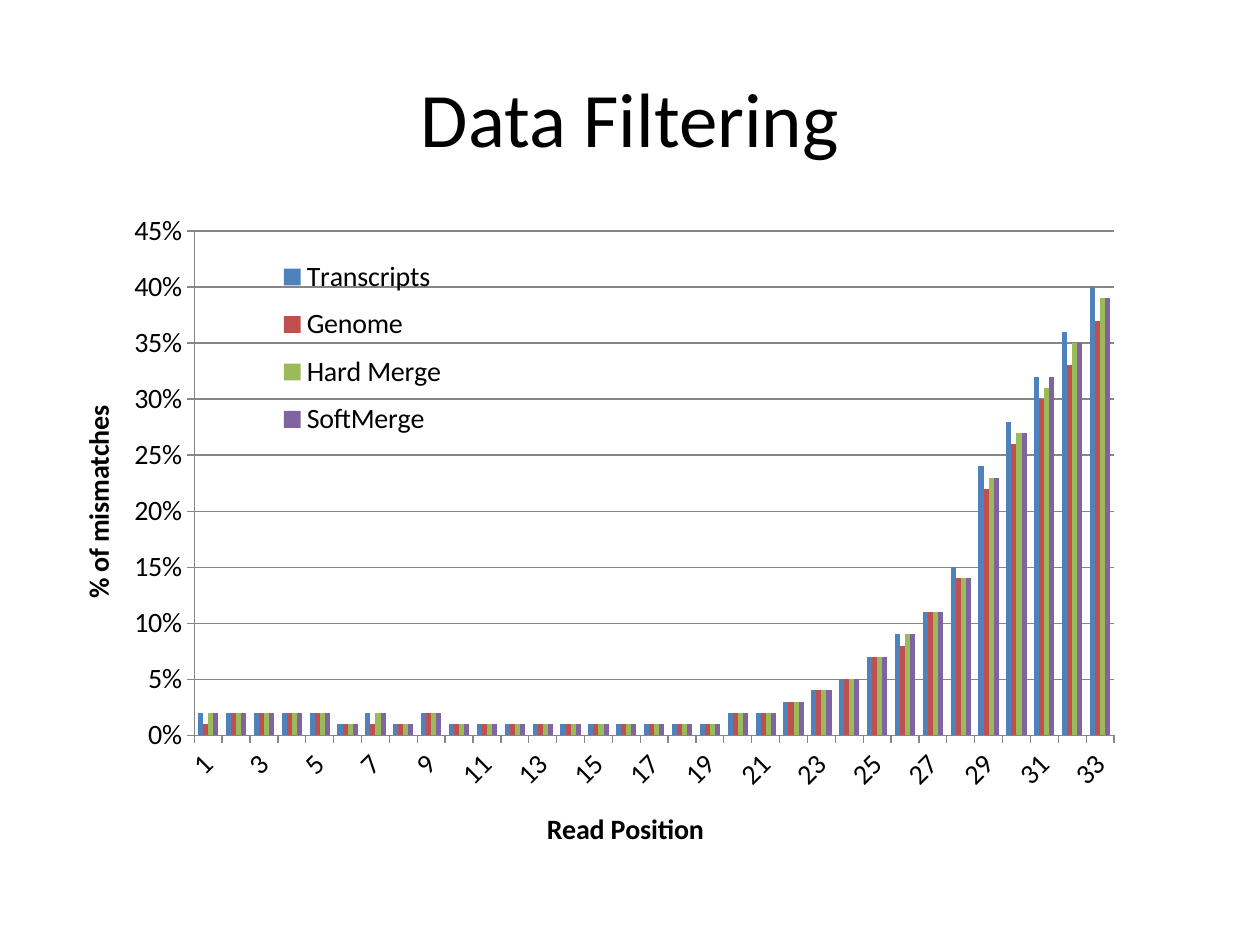
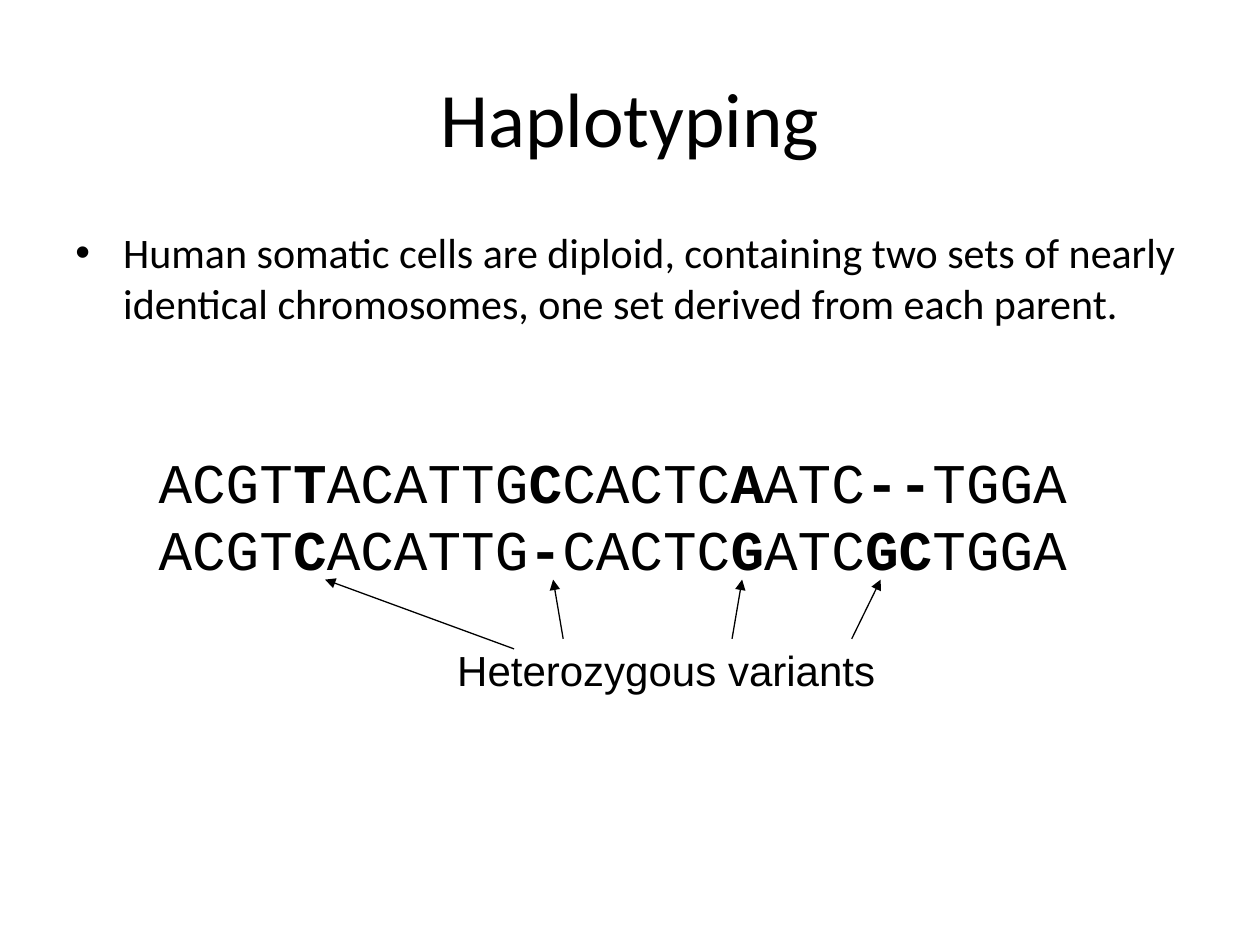
import lxml.etree
import pptx
import pptx.chart.data
import pptx.dml.color
import pptx.enum.chart
import pptx.enum.shapes
import pptx.enum.text
import pptx.oxml.ns
import pptx.util

EMU_PER_PX = 9144  # 100 px to the inch
COLOURS = {
    "text": "000000",
    "axis": "868686",
    "Transcripts": "4F81BD",
    "Genome": "C0504D",
    "Hard Merge": "9BBB59",
    "SoftMerge": "8064A2",
}
ALIGN = pptx.enum.text.PP_ALIGN
ANCHOR = pptx.enum.text.MSO_ANCHOR

# Percent of mismatches at read positions 1 to 33; all series agree on 8 to 25
SHARED_READS = [1, 2] + [1] * 10 + [2, 2, 3, 4, 5, 7]
MISMATCHES = {
    "Transcripts": [2, 2, 2, 2, 2, 1, 2] + SHARED_READS + [9, 11, 15, 24, 28, 32, 36, 40],
    "Genome": [1, 2, 2, 2, 2, 1, 1] + SHARED_READS + [8, 11, 14, 22, 26, 30, 33, 37],
    "Hard Merge": [2, 2, 2, 2, 2, 1, 2] + SHARED_READS + [9, 11, 14, 23, 27, 31, 35, 39],
    "SoftMerge": [2, 2, 2, 2, 2, 1, 2] + SHARED_READS + [9, 11, 14, 23, 27, 32, 35, 39],
}
HAPLOTYPES = [
    "ACGT|T|ACATTG|C|CACTC|A|ATC|--|TGGA",
    "ACGT|C|ACATTG|-|CACTC|G|ATC|GC|TGGA",
]
VARIANT_ARROWS = [
    ((408, 515), (258, 460)),
    ((447, 507), (439, 460)),
    ((581, 507), (589, 460)),
    ((676, 507), (699, 460)),
]


def px(length):
    return pptx.util.Emu(length * EMU_PER_PX)


def rgb(name):
    return pptx.dml.color.RGBColor.from_string(COLOURS[name])


def sub(parent, tag, **attributes):
    return lxml.etree.SubElement(parent, pptx.oxml.ns.qn(tag), **attributes)


def style_font(font, size, name="Calibri", bold=False):
    font.size = pptx.util.Pt(size)
    font.name = name
    font.bold = bold
    font.color.rgb = rgb("text")


def write(paragraph, text, size, font="Calibri", bold=False, align=ALIGN.LEFT):
    """Fill a paragraph; parts between | marks are bold."""
    paragraph.alignment = align
    for index, part in enumerate(text.split("|")):
        run = paragraph.add_run()
        run.text = part
        style_font(run.font, size, font, bold or index % 2 == 1)


def place(element, **percents):
    """Give a chart part a manual layout in percent of the chart."""
    for old in element.findall(pptx.oxml.ns.qn("c:layout")):
        element.remove(old)
    layout = lxml.etree.Element(pptx.oxml.ns.qn("c:layout"))
    manual = sub(layout, "c:manualLayout")
    if element.tag.endswith("plotArea"):
        sub(manual, "c:layoutTarget", val="inner")
    for side in ("x", "y"):
        sub(manual, f"c:{side}Mode", val="edge")
    for side, percent in percents.items():
        sub(manual, f"c:{side}", val=str(round(percent / 100, 3)))
    overlay = element.find(pptx.oxml.ns.qn("c:overlay"))
    if overlay is None:
        element.insert(0, layout)
    else:
        overlay.addprevious(layout)


class Deck:
    """Holds the presentation, its shared style and the current slide."""

    def __init__(self):
        self.presentation = pptx.Presentation()
        self.presentation.slide_width = px(1000)
        self.presentation.slide_height = px(750)
        self.slide = None

    def new_slide(self, title):
        blank = self.presentation.slide_layouts[6]
        self.slide = self.presentation.slides.add_slide(blank)
        self.text_box([title], 50, 30, 900, 125, size=44,
                      anchor=ANCHOR.MIDDLE, align=ALIGN.CENTER)

    def text_box(self, lines, left, top, width, height, wrap=True, anchor=ANCHOR.TOP, **style):
        frame = self.slide.shapes.add_textbox(px(left), px(top), px(width), px(height)).text_frame
        frame.word_wrap = wrap
        frame.vertical_anchor = anchor
        for index, line in enumerate(lines):
            paragraph = frame.add_paragraph() if index else frame.paragraphs[0]
            write(paragraph, line, **style)
        return frame

    def bullet(self, text, left, top, width, height, size):
        paragraph = self.text_box([text], left, top, width, height, size=size).paragraphs[0]
        paragraph.space_before = pptx.util.Pt(size * 0.2)
        properties = paragraph._p.get_or_add_pPr()
        properties.set("marL", str(px(38)))
        properties.set("indent", str(-px(38)))
        sub(properties, "a:buFont", typeface="Arial")
        sub(properties, "a:buChar", char="•")

    def arrow(self, start, end):
        line = self.slide.shapes.add_connector(
            pptx.enum.shapes.MSO_CONNECTOR.STRAIGHT, *map(px, start + end))
        line.line.color.rgb = rgb("text")
        line.line.width = pptx.util.Pt(0.75)
        sub(line.line._get_or_add_ln(), "a:tailEnd", type="triangle")
        sub(line._element.spPr, "a:effectLst")

    def column_chart(self, percents, left, top, width, height):
        chart_data = pptx.chart.data.CategoryChartData(number_format="0%")
        positions = len(next(iter(percents.values())))
        chart_data.categories = [str(position + 1) for position in range(positions)]
        for name, values in percents.items():
            chart_data.add_series(name, [value / 100 for value in values])
        chart = self.slide.shapes.add_chart(
            pptx.enum.chart.XL_CHART_TYPE.COLUMN_CLUSTERED,
            px(left), px(top), px(width), px(height), chart_data).chart
        chart.has_title = False
        style_font(chart.font, 10)
        plot = chart.plots[0]
        plot.gap_width = 150
        plot.overlap = 0
        plot.vary_by_categories = False
        for series in plot.series:
            series.format.fill.solid()
            series.format.fill.fore_color.rgb = rgb(series.name)
        place(chart._chartSpace.chart.plotArea, x=11.1, y=7.3, w=84.2, h=70.6)
        return chart

    def axis(self, axis, title, title_angle, label_angle, **title_place):
        axis.major_tick_mark = pptx.enum.chart.XL_TICK_MARK.OUTSIDE
        axis.minor_tick_mark = pptx.enum.chart.XL_TICK_MARK.NONE
        self.thin_line(axis.format.line)
        style_font(axis.tick_labels.font, 16)
        axis._element.txPr.bodyPr.set("rot", str(label_angle * 60000))
        frame = axis.axis_title.text_frame
        write(frame.paragraphs[0], title, 16, bold=True, align=ALIGN.CENTER)
        frame._txBody.bodyPr.set("rot", str(title_angle * 60000))
        frame._txBody.bodyPr.set("vert", "horz")
        place(axis.axis_title._element, **title_place)

    def thin_line(self, line):
        line.color.rgb = rgb("axis")
        line.width = pptx.util.Pt(0.75)

    def legend(self, chart, **legend_place):
        chart.has_legend = True
        chart.legend.position = pptx.enum.chart.XL_LEGEND_POSITION.RIGHT
        chart.legend.include_in_layout = False
        style_font(chart.legend.font, 16)
        place(chart.legend._element, **legend_place)


def add_data_filtering(deck):
    deck.new_slide("Data Filtering")
    chart = deck.column_chart(MISMATCHES, 58, 142, 867, 567)
    deck.axis(chart.category_axis, "Read Position", 0, -45, x=42.9, y=87.6)
    percent_axis = chart.value_axis
    deck.axis(percent_axis, "% of mismatches", -90, 0, x=0.1, y=31)
    percent_axis.minimum_scale = 0
    percent_axis.maximum_scale = 0.45
    percent_axis.major_unit = 0.05
    percent_axis.tick_labels.number_format = "0%"
    percent_axis.tick_labels.number_format_is_linked = False
    percent_axis.has_major_gridlines = True
    deck.thin_line(percent_axis.major_gridlines.format.line)
    deck.legend(chart, x=18, y=9.5, w=17, h=28.4)


def add_haplotyping(deck):
    deck.new_slide("Haplotyping")
    deck.bullet("Human somatic cells are diploid, containing two sets of nearly identical "
                "chromosomes, one set derived from each parent.", 50, 175, 900, 117, size=24)
    deck.text_box(HAPLOTYPES, 116, 350, 742, 117, size=32, font="Courier New")
    deck.text_box(["Heterozygous variants"], 353, 507, 352, 50, wrap=False,
                  size=24, font="Arial")
    for start, end in VARIANT_ARROWS:
        deck.arrow(start, end)


def main():
    deck = Deck()
    add_data_filtering(deck)
    add_haplotyping(deck)
    deck.presentation.save("out.pptx")


if __name__ == "__main__":
    main()
